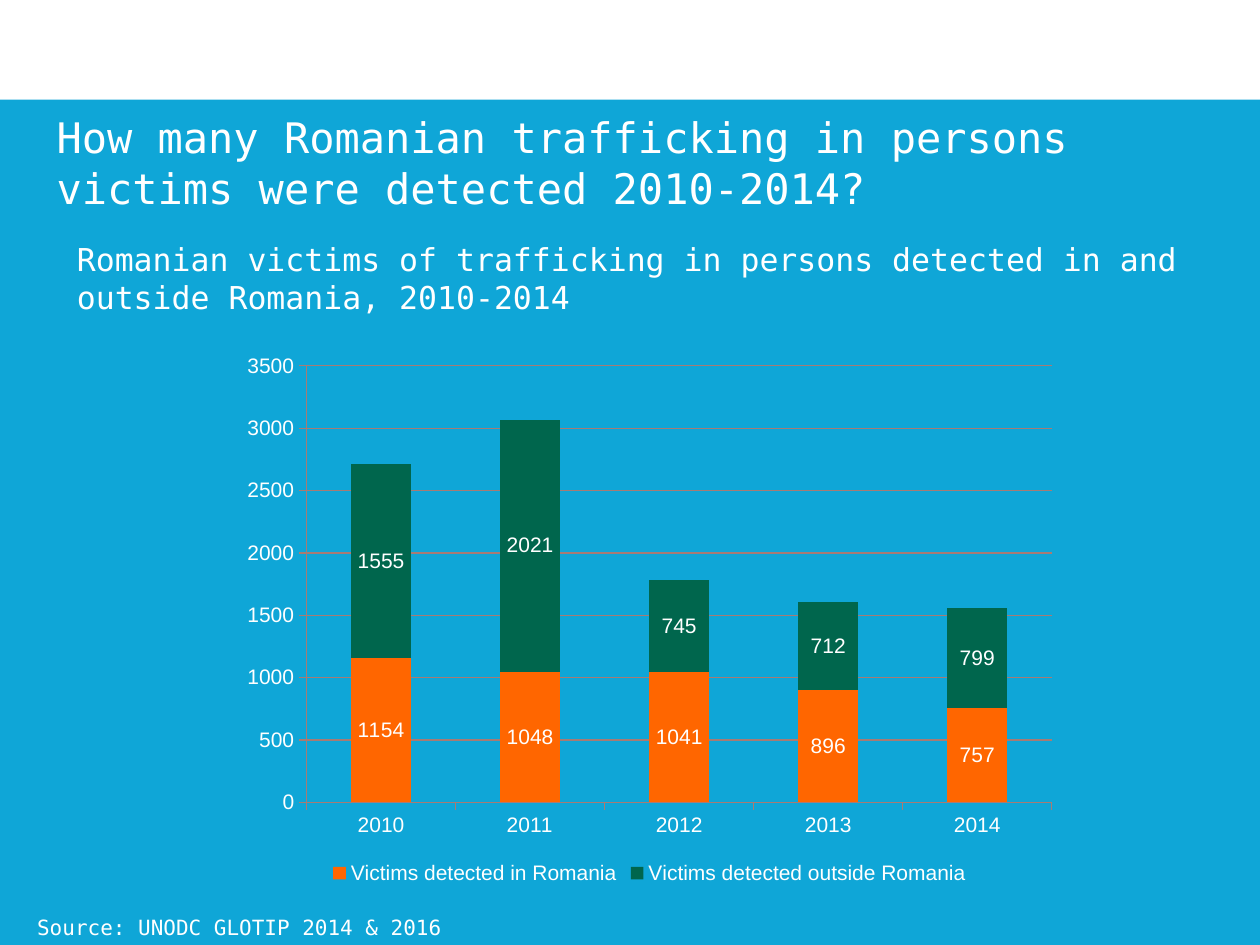
from pptx import Presentation
from pptx.chart.data import CategoryChartData
from pptx.dml.color import RGBColor
from pptx.enum.chart import XL_CHART_TYPE, XL_LABEL_POSITION, XL_LEGEND_POSITION, XL_TICK_MARK
from pptx.enum.shapes import MSO_SHAPE
from pptx.util import Cm, Pt

STACKED = XL_CHART_TYPE.COLUMN_STACKED
CENTER = XL_LABEL_POSITION.CENTER
BOTTOM = XL_LEGEND_POSITION.BOTTOM
OUTSIDE = XL_TICK_MARK.OUTSIDE
RECT = MSO_SHAPE.RECTANGLE

WHITE, BLUE, LINE = "FFFFFF", "0FA6D7", "A87B74"


def color(value):
    return RGBColor.from_string(value)


def set_font(font, name, size, value=WHITE):
    for key, val in {"name": name, "size": Pt(size), "bold": False}.items():
        setattr(font, key, val)
    font.color.rgb = color(value)


prs = Presentation()
prs.slide_width, prs.slide_height = Cm(25.4), Cm(19.05)
s = prs.slides.add_slide(prs.slide_layouts[6])
s.background.fill.solid()
s.background.fill.fore_color.rgb = color(BLUE)

# White band across the top
band = s.shapes.add_shape(RECT, Cm(0), Cm(-0.48), Cm(25.4), Cm(2.49))
band.shadow.inherit = False
band.fill.solid()
band.fill.fore_color.rgb = color(WHITE)
band.line.fill.background()

# Title, chart heading and source
texts = [
    ("How many Romanian trafficking in persons victims were detected 2010-2014?",
     24, (0.89, 2.13, 24.2, 2.31)),
    ("Romanian victims of trafficking in persons detected in and outside Romania, 2010-2014",
     18, (1.3, 4.72, 22.8, 1.8)),
    ("Source: UNODC GLOTIP 2014 & 2016", 12, (0.5, 18.31, 9.8, 0.76)),
]
for text, size, box in texts:
    sp = s.shapes.add_textbox(*map(Cm, box))
    tf = sp.text_frame
    tf.word_wrap = True
    r = tf.paragraphs[0].add_run()
    r.text = text
    set_font(r.font, "DejaVu Sans Mono", size)

# Stacked column chart
victims = [
    ("Victims detected in Romania", "FF6600", (1154, 1048, 1041, 896, 757)),
    ("Victims detected outside Romania", "00664D", (1555, 2021, 745, 712, 799)),
]
data = CategoryChartData()
data.categories = [str(year) for year in range(2010, 2015)]
for name, _, values in victims:
    data.add_series(name, values)
box = map(Cm, (4.65, 6.93, 16.89, 11))
chart = s.shapes.add_chart(STACKED, *box, data).chart
set_font(chart.font, "Arial Narrow", 10, "000000")
chart.has_title = False

plot = chart.plots[0]
for key, val in {"gap_width": 150, "overlap": 100, "vary_by_categories": False}.items():
    setattr(plot, key, val)
for series, (_, fill, _) in zip(plot.series, victims):
    series.format.fill.solid()
    series.format.fill.fore_color.rgb = color(fill)
    labels = series.data_labels
    labels.show_value = True
    labels.position = CENTER
    set_font(labels.font, "Arial", 12)

for axis in (chart.category_axis, chart.value_axis):
    axis.major_tick_mark = OUTSIDE
    axis.format.line.color.rgb = color(LINE)
    axis.format.line.width = Pt(0.75)
    set_font(axis.tick_labels.font, "Arial", 12)
axis = chart.value_axis
for key, val in {"minimum_scale": 0, "maximum_scale": 3500, "major_unit": 500,
                 "has_major_gridlines": True}.items():
    setattr(axis, key, val)
axis.major_gridlines.format.line.color.rgb = color(LINE)
axis.major_gridlines.format.line.width = Pt(0.75)

chart.has_legend = True
chart.legend.position = BOTTOM
chart.legend.include_in_layout = False
set_font(chart.legend.font, "Arial", 12)

prs.save("out.pptx")
